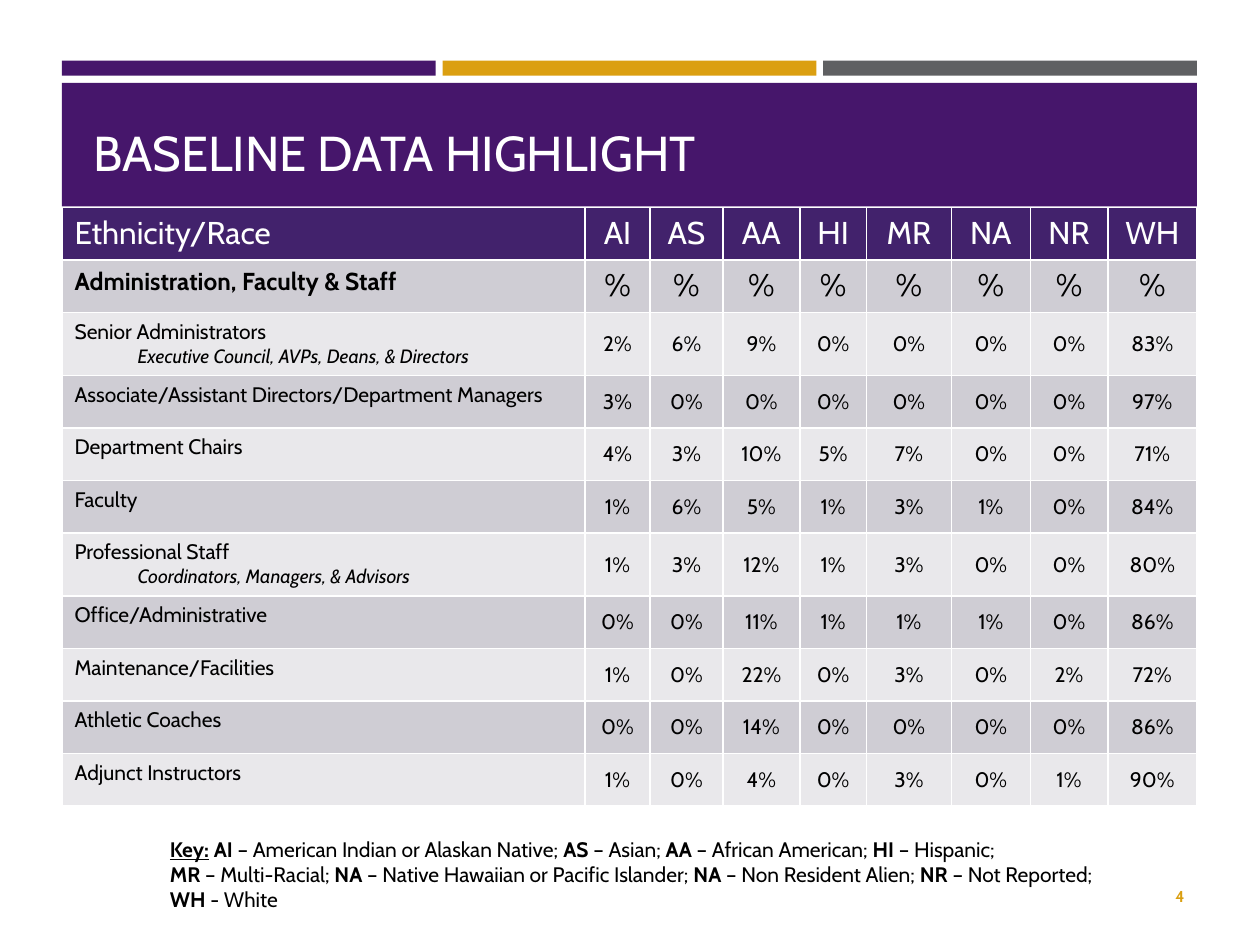
from pptx import Presentation
from pptx.dml.color import RGBColor
from pptx.enum.shapes import MSO_SHAPE
from pptx.enum.text import MSO_ANCHOR, PP_ALIGN
from pptx.util import Pt

COLORS = {"purple": "46166B", "gold": "DB9F11", "gray": "5F6062",
          "header": "42226C", "dark": "CFCDD4", "light": "E9E8EB",
          "number": "DA9F11", "white": "FFFFFF", "black": "000000"}
LEFT, WIDTH = 35.4, 648.6
BAR_GAP = 3.9
COLUMN_WIDTHS = [298.9, 37.1, 41.7, 44, 38, 48.6, 45.1, 44.3, 50.9]
GROUPS = ["AI", "AS", "AA", "HI", "MR", "NA", "NR", "WH"]
# Staff category, optional detail line, percentage for each group
STAFF = [
    ("Senior Administrators", "Executive Council, AVPs, Deans, & Directors",
     [2, 6, 9, 0, 0, 0, 0, 83]),
    ("Associate/Assistant Directors/Department Managers", "",
     [3, 0, 0, 0, 0, 0, 0, 97]),
    ("Department Chairs", "", [4, 3, 10, 5, 7, 0, 0, 71]),
    ("Faculty", "", [1, 6, 5, 1, 3, 1, 0, 84]),
    ("Professional Staff", "Coordinators, Managers, & Advisors",
     [1, 3, 12, 1, 3, 0, 0, 80]),
    ("Office/Administrative", "", [0, 0, 11, 1, 1, 1, 0, 86]),
    ("Maintenance/Facilities", "", [1, 0, 22, 0, 3, 0, 2, 72]),
    ("Athletic Coaches", "", [0, 0, 14, 0, 0, 0, 0, 86]),
    ("Adjunct Instructors", "", [1, 0, 4, 0, 3, 0, 1, 90]),
]
KEY_LINES = [
    [("AI", " – American Indian or Alaskan Native; "), ("AS", " – Asian; "),
     ("AA", " – African American; "), ("HI", " – Hispanic;")],
    [("MR", " – Multi-Racial; "),
     ("NA", " – Native Hawaiian or Pacific Islander; "),
     ("NA", " – Non Resident Alien; "), ("NR", " – Not Reported;")],
    [("WH", " - White")],
]


class SlideBuilder:
    """Holds the style and the current slide."""

    font = "Cabin"

    def __init__(self, s):
        self.s = s

    def color(self, name):
        return RGBColor.from_string(COLORS[name])

    def style(self, p, size, color="black", bold=False, italic=False,
              align=PP_ALIGN.LEFT):
        p.alignment = align
        f = p.font
        f.name, f.size, f.bold, f.italic = self.font, Pt(size), bold, italic
        f.color.rgb = self.color(color)

    def place(self, sp, x, y, w, h):
        sp.left, sp.top, sp.width, sp.height = Pt(x), Pt(y), Pt(w), Pt(h)

    def bar(self, x, y, w, h, color):
        sp = self.s.shapes.add_shape(MSO_SHAPE.RECTANGLE,
                                     Pt(x), Pt(y), Pt(w), Pt(h))
        sp.shadow.inherit = False
        sp.fill.solid()
        sp.fill.fore_color.rgb = self.color(color)
        sp.line.fill.background()

    def title(self, text, x, y, w, h):
        sp = self.s.shapes.title
        self.place(sp, x, y, w, h)
        # Bring the title in front of its band
        self.s.shapes._spTree.append(sp._element)
        tf = sp.text_frame
        tf.text = text
        tf.vertical_anchor = MSO_ANCHOR.TOP
        self.style(tf.paragraphs[0], 28, "white")

    def textbox(self, x, y, w, h, anchor=MSO_ANCHOR.TOP):
        tf = self.s.shapes.add_textbox(Pt(x), Pt(y), Pt(w), Pt(h)).text_frame
        tf.word_wrap = True
        tf.vertical_anchor = anchor
        return tf

    def page_number(self, text, x, y, w, h):
        tf = self.textbox(x, y, w, h, MSO_ANCHOR.MIDDLE)
        tf.text = text
        self.style(tf.paragraphs[0], 9, "number", bold=True,
                   align=PP_ALIGN.RIGHT)

    def key(self, lines, x, y, w, h):
        tf = self.textbox(x, y, w, h)
        for i, line in enumerate(lines):
            p = tf.paragraphs[0] if i == 0 else tf.add_paragraph()
            self.style(p, 12)
            p._p.get_or_add_pPr().set("marL", str(Pt(8.64)))
            if i == 0:
                r = p.add_run()
                r.text = "Key:"
                r.font.bold = r.font.underline = True
                p.add_run().text = " "
            for code, meaning in line:
                r = p.add_run()
                r.text = code
                r.font.bold = True
                p.add_run().text = meaning

    def cell(self, cell, text, fill, size, anchor=MSO_ANCHOR.TOP, **style):
        cell.fill.solid()
        cell.fill.fore_color.rgb = self.color(fill)
        cell.vertical_anchor = anchor
        cell.text_frame.text = text
        self.style(cell.text_frame.paragraphs[0], size, **style)

    def detail(self, cell, text):
        """Add an indented italic line below the category name."""
        p = cell.text_frame.add_paragraph()
        p.text = text
        self.style(p, 11, italic=True)
        p._p.get_or_add_pPr().set("marL", str(Pt(36)))

    def table(self, x, y, w):
        heights = [30, 30] + [36 if detail else 30 for _, detail, _ in STAFF]
        table = self.s.shapes.add_table(
            len(heights), len(COLUMN_WIDTHS),
            Pt(x), Pt(y), Pt(w), Pt(sum(heights))).table
        for column, width in zip(table.columns, COLUMN_WIDTHS):
            column.width = Pt(width)
        for row, height in zip(table.rows, heights):
            row.height = Pt(height)

        center = PP_ALIGN.CENTER
        self.cell(table.cell(0, 0), "Ethnicity/Race", "header", 18,
                  color="white")
        self.cell(table.cell(1, 0), "Administration, Faculty & Staff", "dark",
                  14, bold=True)
        for c, group in enumerate(GROUPS, 1):
            self.cell(table.cell(0, c), group, "header", 18, color="white",
                      align=center)
            self.cell(table.cell(1, c), "%", "dark", 18, align=center)
        for i, (name, detail, values) in enumerate(STAFF, 2):
            fill = "dark" if i % 2 else "light"
            self.cell(table.cell(i, 0), name, fill, 12)
            if detail:
                self.detail(table.cell(i, 0), detail)
            for c, value in enumerate(values, 1):
                self.cell(table.cell(i, c), f"{value}%", fill, 12,
                          MSO_ANCHOR.MIDDLE, align=center)


def main():
    prs = Presentation()
    prs.slide_width, prs.slide_height = Pt(720), Pt(540)
    b = SlideBuilder(prs.slides.add_slide(prs.slide_layouts[5]))

    bar_width = (WIDTH - 2 * BAR_GAP) / 3
    for i, color in enumerate(["purple", "gold", "gray"]):
        b.bar(LEFT + i * (bar_width + BAR_GAP), 34.7, bar_width, 8.5, color)
    b.bar(LEFT, 47.4, WIDTH, 70.6, "purple")
    b.page_number("4", 614.2, 497.5, 69.8, 28.8)
    b.table(LEFT, 118.6, WIDTH)
    b.key(KEY_LINES, 81.4, 474.5, 584, 51)
    b.title("BASELINE DATA HIGHLIGHT", 46.1, 66.2, 401.8, 41)

    prs.save("out.pptx")


if __name__ == "__main__":
    main()
